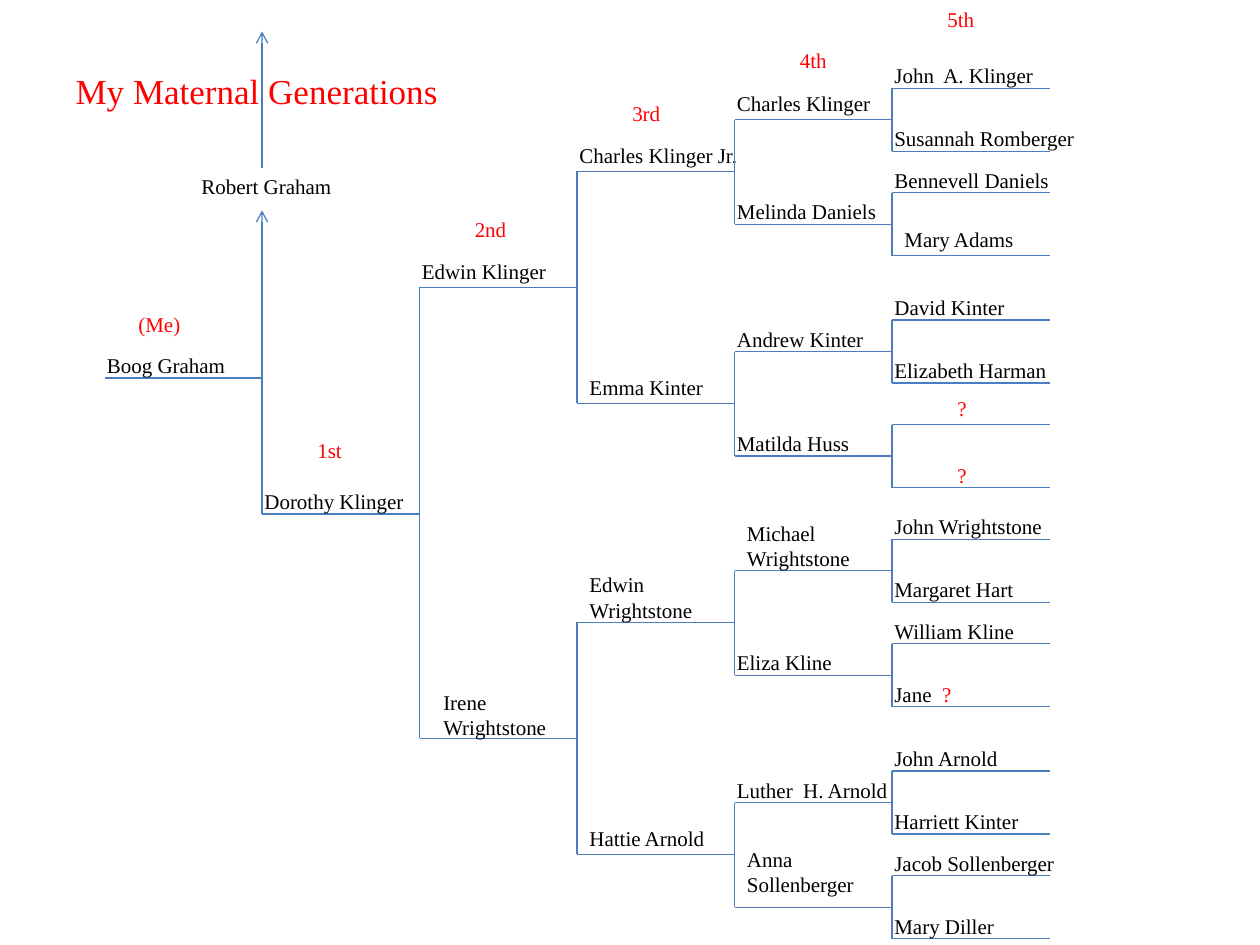
from dataclasses import dataclass

from lxml import etree
from pptx import Presentation
from pptx.dml.color import RGBColor
from pptx.enum import shapes, text as text_enum
from pptx.oxml import ns
from pptx.util import Inches, Pt

COLORS = {"line": "4B7EBC", "name": "000000", "accent": "FF0000"}
FONT = "Times New Roman"
LEFT = 0.83
COLUMN = 1.25
ROOT_Y = 4.08
BRANCHES = [(1.8, 1.78), (0.92, 0.92), (0.41, 0.42), (0.25, 0.25)]


@dataclass
class Person:
    name: str
    width: float
    dx: float = -0.08
    rise: float = 0.25
    color: str = "name"
    suffix: str = ""
    wrap: bool = False


GENERATIONS = [
    [Person("Dorothy Klinger", 1.32)],
    [
        Person("Edwin Klinger", 1.6, rise=0.28, wrap=True),
        Person("Irene\nWrightstone", 1.03, dx=0.09, rise=0.44),
    ],
    [
        Person("Charles Klinger Jr.", 1.47, rise=0.28),
        Person("Emma Kinter", 1.12, dx=0, rise=0.28),
        Person("Edwin\nWrightstone", 1.07, dx=0, rise=0.45),
        Person("Hattie Arnold", 1.12, dx=0, rise=0.28),
    ],
    [
        Person("Charles Klinger", 1.27, rise=0.28),
        Person("Melinda Daniels", 1.32),
        Person("Andrew Kinter", 1.22),
        Person("Matilda Huss", 1.1),
        Person("Michael\nWrightstone", 1.03, dx=0, rise=0.45),
        Person("Eliza Kline", 0.97),
        Person("Luther  H. Arnold", 1.41),
        Person("Anna\nSollenberger", 1.06, dx=0, rise=0.53),
    ],
    [
        Person("John  A. Klinger", 1.31),
        Person("Susannah Romberger", 1.67, wrap=True),
        Person("Bennevell Daniels", 1.44),
        Person("Mary Adams", 1.08, dx=0, rise=0.28),
        Person("David Kinter", 1.09),
        Person("Elizabeth Harman", 1.43),
        Person("?", 0.28, dx=0.42, rise=0.28, color="accent"),
        Person("?", 0.28, dx=0.42, color="accent"),
        Person("John Wrightstone", 1.39),
        Person("Margaret Hart", 1.16),
        Person("William Kline", 1.17),
        Person("Jane  ", 0.66, suffix="?"),
        Person("John Arnold", 1.03),
        Person("Harriett Kinter", 1.2),
        Person("Jacob Sollenberger", 1.54),
        Person("Mary Diller", 1),
    ],
]

HEADINGS = [
    ("(Me)", 1, 2.42, 0.54),
    ("1st", 2.42, 3.42, 0.41),
    ("2nd", 3.67, 1.67, 0.46),
    ("3rd", 4.92, 0.75, 0.43),
    ("4th", 6.25, 0.33, 0.42),
    ("5th", 7.42, 0, 0.42),
]


def column_x(level):
    return LEFT + COLUMN * level


def format_run(run, size, color):
    run.font.name = FONT
    run.font.size = Pt(size)
    run.font.color.rgb = RGBColor.from_string(COLORS[color])


def write_text(shape, content, size=12, color="name", suffix="", wrap=False):
    frame = shape.text_frame
    frame.text = content
    frame.word_wrap = wrap
    frame.auto_size = text_enum.MSO_AUTO_SIZE.SHAPE_TO_FIT_TEXT
    frame.vertical_anchor = text_enum.MSO_ANCHOR.TOP
    for paragraph in frame.paragraphs:
        paragraph.alignment = text_enum.PP_ALIGN.LEFT
        for run in paragraph.runs:
            format_run(run, size, color)
    if suffix:
        run = frame.paragraphs[-1].add_run()
        run.text = suffix
        format_run(run, size, "accent")


def add_label(slide, content, left, top, width, **style):
    height = 0.3 + 0.2 * content.count("\n")
    box = slide.shapes.add_textbox(Inches(left), Inches(top), Inches(width), Inches(height))
    write_text(box, content, **style)


def add_line(slide, x1, y1, x2, y2, arrow=False):
    line = slide.shapes.add_connector(
        shapes.MSO_CONNECTOR.STRAIGHT, Inches(x1), Inches(y1), Inches(x2), Inches(y2)
    )
    line.line.color.rgb = RGBColor.from_string(COLORS["line"])
    line.line.width = Pt(0.75)
    if arrow:
        etree.SubElement(line.line._get_or_add_ln(), ns.qn("a:tailEnd"), type="arrow")
    etree.SubElement(line._element.spPr, ns.qn("a:effectLst"))


def add_person(slide, person, level, y):
    x = column_x(level)
    add_line(slide, x, y, x + COLUMN, y)
    add_label(
        slide, person.name, x + person.dx, y - person.rise, person.width,
        color=person.color, suffix=person.suffix, wrap=person.wrap,
    )


def add_tree(slide):
    heights = [ROOT_Y]
    for level, people in enumerate(GENERATIONS, 1):
        if level > 1:
            up, down = BRANCHES[level - 2]
            for y in heights:
                add_line(slide, column_x(level), y - up, column_x(level), y + down)
            heights = [y + step for y in heights for step in (-up, down)]
        for person, y in zip(people, heights):
            add_person(slide, person, level, y)


def add_title(slide, content):
    title = slide.shapes.title
    title.left, title.top = Inches(0.5), Inches(0.5)
    title.width, title.height = Inches(3.09), Inches(0.44)
    write_text(title, content, size=20, color="accent")


def main():
    presentation = Presentation()
    presentation.slide_width = Inches(10)
    presentation.slide_height = Inches(7.5)
    slide = presentation.slides.add_slide(presentation.slide_layouts[5])
    add_title(slide, "My Maternal Generations")
    add_person(slide, Person("Boog Graham", 1.15), 0, 3)
    add_tree(slide)
    add_line(slide, column_x(1), ROOT_Y, column_x(1), 1.67, arrow=True)
    add_label(slide, "Robert Graham", 1.5, 1.33, 1.25)
    add_line(slide, column_x(1), 1.33, column_x(1), 0.25, arrow=True)
    for content, left, top, width in HEADINGS:
        add_label(slide, content, left, top, width, color="accent")
    presentation.save("out.pptx")


if __name__ == "__main__":
    main()
